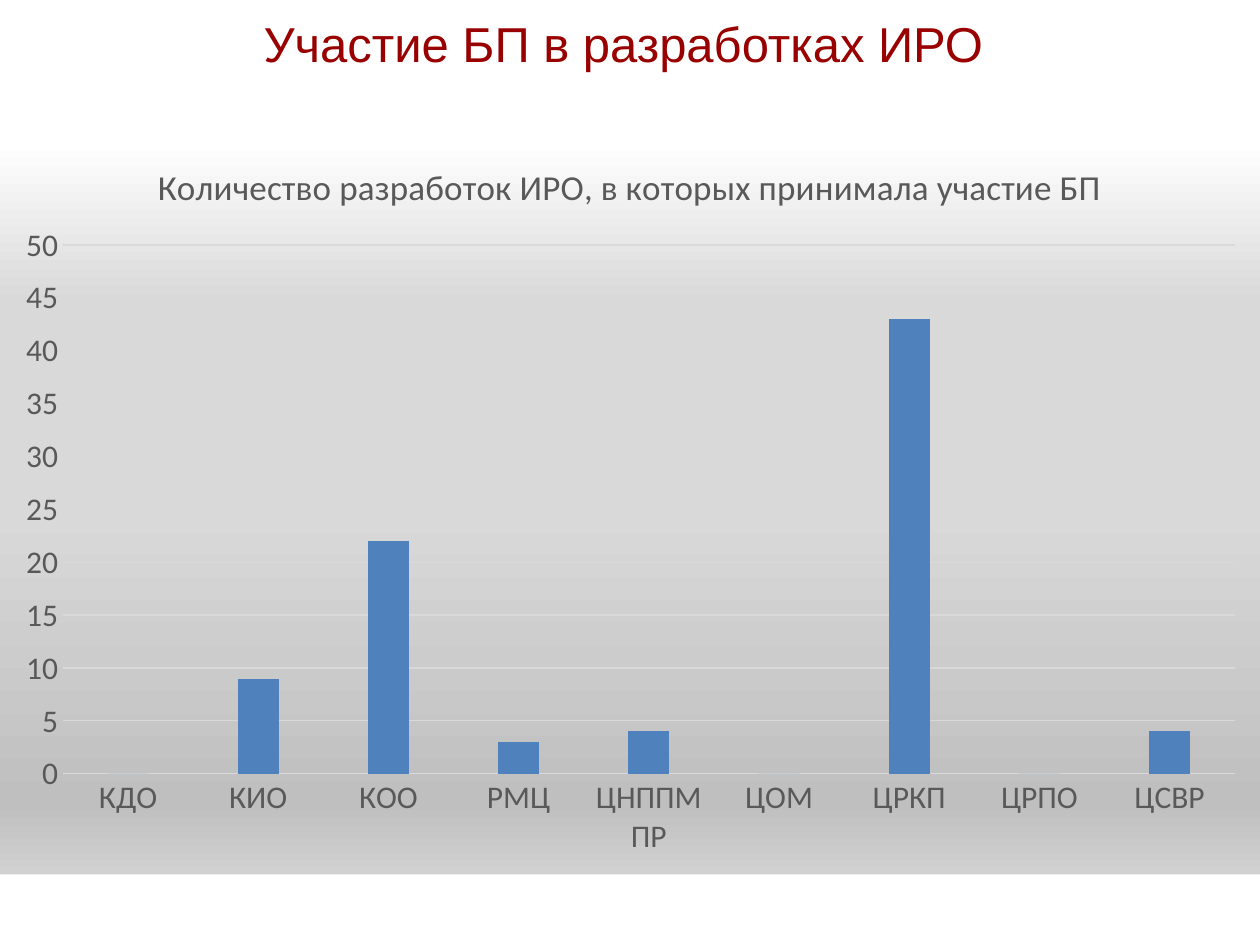
import pptx
import pptx.chart.data
import pptx.dml.color
import pptx.enum.chart
import pptx.enum.text
import pptx.oxml
import pptx.oxml.ns
import pptx.util
from pptx.util import Inches, Pt

GREY_TEXT = "595959"
GREY_LINE = "D9D9D9"
TITLE_RED = "990000"
DEPARTMENTS = {
    "КДО": 0, "КИО": 9, "КОО": 22, "РМЦ": 3, "ЦНППМ ПР": 4,
    "ЦОМ": 0, "ЦРКП": 43, "ЦРПО": 0, "ЦСВР": 4,
}
BACKGROUND_STOPS = [(0, "FFFFFF"), (15, "FFFFFF"), (32, "D9D9D9"),
                    (54, "D9D9D9"), (85, "BFBFBF"), (100, "E6E6E6")]


def color(hex_code):
    return pptx.dml.color.RGBColor.from_string(hex_code)


def xml(text):
    """Parse an element whose prefixes are a: or c:."""
    head, mark, tail = text.partition(">")
    spaces = pptx.oxml.ns.nsdecls("a", "c")
    return pptx.oxml.parse_xml(f"{head} {spaces}{mark}{tail}")


def set_font(font, size, hex_code, name):
    font.size = Pt(size)
    font.name = name
    font.bold = False
    font.color.rgb = color(hex_code)


def set_line(line, hex_code):
    line.color.rgb = color(hex_code)
    line.width = Pt(0.75)


def paint_background(page):
    fill = page.background.fill
    fill.gradient()
    fill.gradient_angle = 270
    stops = "".join(
        f'<a:gs pos="{percent * 1000}"><a:srgbClr val="{code}"/></a:gs>'
        for percent, code in BACKGROUND_STOPS)
    old_list = page.background._cSld.find(".//" + pptx.oxml.ns.qn("a:gsLst"))
    old_list.getparent().replace(old_list, xml(f"<a:gsLst>{stops}</a:gsLst>"))


def add_band(page, left, top, width, height):
    band = page.shapes.add_shape(
        pptx.enum.shapes.MSO_SHAPE.RECTANGLE, left, top, width, height)
    band.shadow.inherit = False
    band.fill.solid()
    band.fill.fore_color.rgb = color("FFFFFF")
    band.line.fill.background()


def add_title(page, left, top, width, height):
    box = page.shapes.add_textbox(left, top, width, height)
    box.fill.solid()
    box.fill.fore_color.rgb = color("FFFFFF")
    frame = box.text_frame
    frame.word_wrap = True
    frame.vertical_anchor = pptx.enum.text.MSO_ANCHOR.MIDDLE
    para = frame.paragraphs[0]
    para.alignment = pptx.enum.text.PP_ALIGN.CENTER
    span = para.add_run()
    span.text = "Участие БП в разработках ИРО "
    set_font(span.font, 28, TITLE_RED, "Arial")
    span.font._element.insert(0, xml(
        f'<a:ln w="{Pt(0.75)}"><a:solidFill><a:srgbClr val="{TITLE_RED}"/>'
        "</a:solidFill></a:ln>"))


def set_plot_area(chart, x, y, width, height):
    """Fix the inner plot area, in fractions of the chart."""
    parts = "".join(f'<c:{tag} val="{value}"/>' for tag, value in
                    [("x", x), ("y", y), ("w", width), ("h", height)])
    plot_area = chart._chartSpace.chart.plotArea
    for old_layout in plot_area.findall(pptx.oxml.ns.qn("c:layout")):
        plot_area.remove(old_layout)
    plot_area.insert(0, xml(
        '<c:layout><c:manualLayout><c:layoutTarget val="inner"/>'
        '<c:xMode val="edge"/><c:yMode val="edge"/>'
        f"{parts}</c:manualLayout></c:layout>"))


def add_participation_chart(page, left, top, width, height):
    data = pptx.chart.data.CategoryChartData()
    data.categories = list(DEPARTMENTS)
    data.add_series("Series 1", list(DEPARTMENTS.values()))
    chart = page.shapes.add_chart(
        pptx.enum.chart.XL_CHART_TYPE.COLUMN_CLUSTERED,
        left, top, width, height, data).chart
    set_font(chart.font, 18, "000000", "Calibri")
    chart.has_legend = False

    chart.has_title = True
    para = chart.chart_title.text_frame.paragraphs[0]
    para.text = "Количество разработок ИРО, в которых принимала участие БП"
    set_font(para.font, 20, GREY_TEXT, "Calibri")
    chart.chart_title.include_in_layout = False

    for axis in (chart.category_axis, chart.value_axis):
        axis.major_tick_mark = pptx.enum.chart.XL_TICK_MARK.NONE
        axis.minor_tick_mark = pptx.enum.chart.XL_TICK_MARK.NONE
        set_font(axis.tick_labels.font, 18, GREY_TEXT, "Calibri")
    set_line(chart.category_axis.format.line, GREY_LINE)
    values = chart.value_axis
    values.minimum_scale, values.maximum_scale, values.major_unit = 0, 50, 5
    values.format.line.fill.background()
    values.has_major_gridlines = True
    set_line(values.major_gridlines.format.line, GREY_LINE)

    plot = chart.plots[0]
    plot.gap_width = 219
    plot.overlap = -27
    plot.vary_by_categories = False
    bars = plot.series[0].format.fill
    bars.solid()
    bars.fore_color.rgb = color("4F81BD")
    set_plot_area(chart, 0.05, 0.15, 0.93, 0.72)


def main():
    deck = pptx.Presentation()
    deck.slide_width, deck.slide_height = Inches(10), Inches(7.5)
    page = deck.slides.add_slide(deck.slide_layouts[6])
    paint_background(page)
    add_band(page, Inches(0), Inches(6.94), Inches(10.01), Inches(0.58))
    add_title(page, Inches(0), Inches(0), Inches(10), Inches(0.68))
    add_participation_chart(
        page, Inches(0), Inches(1.07), Inches(10), Inches(5.83))
    deck.save("out.pptx")


if __name__ == "__main__":
    main()
